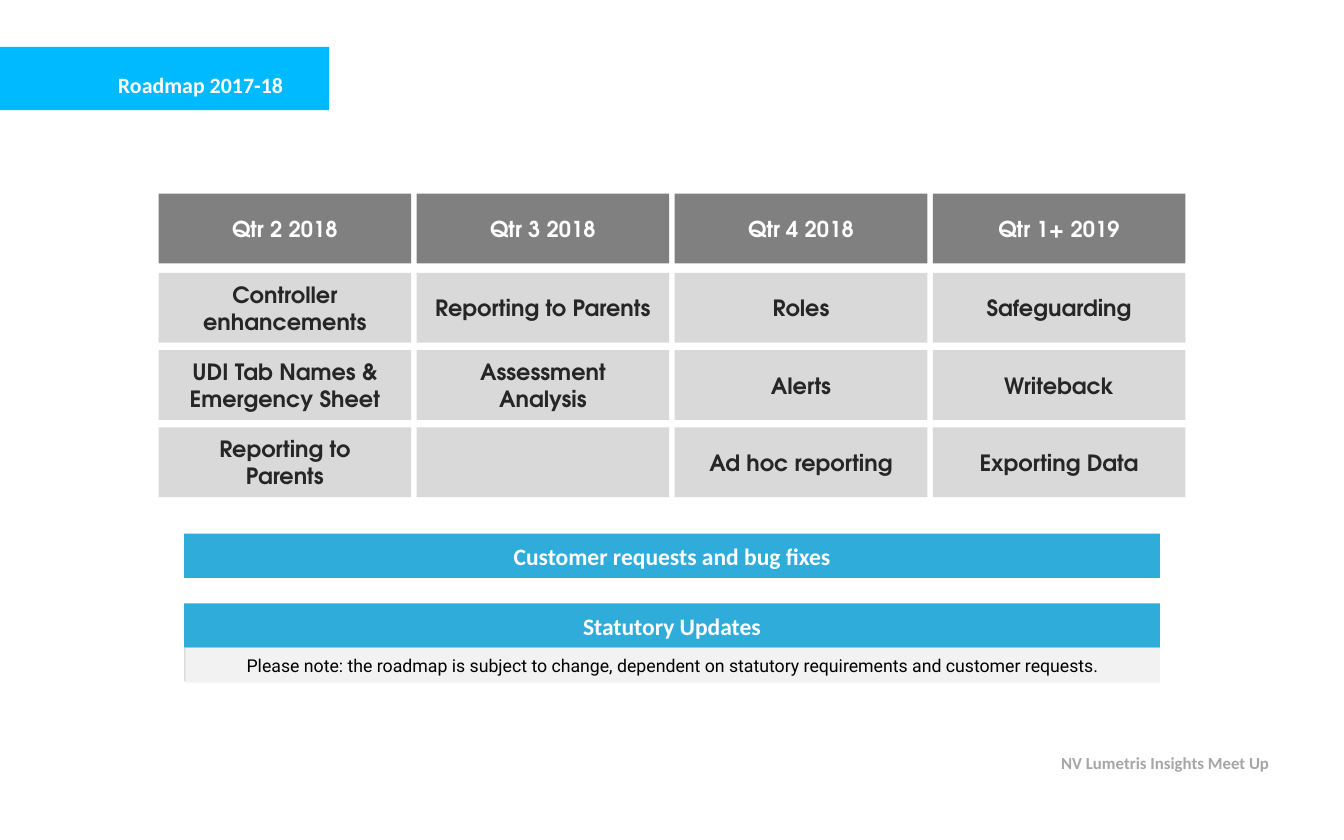
import pptx
import pptx.util
import pptx.dml.color
import pptx.enum.shapes
import pptx.enum.text
from pptx.util import Inches, Pt

COLORS = {
    "title": "00BAFF", "band": "30ACDA", "header": "808080", "cell": "D9D9D9",
    "note": "F2F2F2", "ink": "262626", "black": "000000", "white": "FFFFFF",
    "footer": "A6A6A6",
}
HEADING_FONT = "TeX Gyre Adventor"
BODY_FONT = "Calibri"
ALIGN = pptx.enum.text.PP_ALIGN
ANCHOR = pptx.enum.text.MSO_ANCHOR

ROADMAP = [
    ("Qtr 2 2018", ["Controller enhancements", "UDI Tab Names & Emergency Sheet",
                    "Reporting to Parents"]),
    ("Qtr 3 2018", ["Reporting to Parents", "Assessment Analysis", ""]),
    ("Qtr 4 2018", ["Roles", "Alerts", "Ad hoc reporting"]),
    ("Qtr 1+ 2019", ["Safeguarding", "Writeback", "Exporting Data"]),
]
SIDE_INSETS = {(0, 2): 0.4, (1, 1): 0.28}


def rgb(name):
    return pptx.dml.color.RGBColor.from_string(COLORS[name])


def add_box(s, x, y, w, h, fill):
    sp = s.shapes.add_shape(pptx.enum.shapes.MSO_SHAPE.RECTANGLE,
                            Inches(x), Inches(y), Inches(w), Inches(h))
    sp.shadow.inherit = False
    sp.fill.solid()
    sp.fill.fore_color.rgb = rgb(fill)
    sp.line.fill.background()
    return sp


def set_text(sp, text, size, font, color, bold=True, align=ALIGN.CENTER,
             anchor=ANCHOR.MIDDLE, inset=(0.09, 0.04)):
    tf = sp.text_frame
    tf.word_wrap = True
    tf.vertical_anchor = anchor
    tf.margin_left = tf.margin_right = Inches(inset[0])
    tf.margin_top = tf.margin_bottom = Inches(inset[1])
    p = tf.paragraphs[0]
    p.text = text
    p.alignment = align
    p.font.size = Pt(size)
    p.font.name = font
    p.font.bold = bold
    p.font.color.rgb = rgb(color)
    return p


def add_label(s, x, y, w, h, text, size, color, align=ALIGN.LEFT):
    sp = s.shapes.add_textbox(Inches(x), Inches(y), Inches(w), Inches(h))
    return set_text(sp, text, size, BODY_FONT, color, align=align,
                    anchor=ANCHOR.TOP, inset=(0.1, 0.05))


def add_title(s, x, y, w, h):
    add_box(s, x, y, w, h, "title")
    p = add_label(s, x + 0.78, y + 0.17, 1.6, 0.26, "Roadmap 2017-18", 11.7, "white")
    p.line_spacing = 0.8


def add_roadmap(s, x, y, w, h):
    gap, cell_h, header_gap = 0.04, 0.52, 0.59
    row_step = (h - header_gap - cell_h) / 2
    cell_w = (w - gap * (len(ROADMAP) - 1)) / len(ROADMAP)
    for col, (quarter, items) in enumerate(ROADMAP):
        left = x + col * (cell_w + gap)
        header = add_box(s, left, y, cell_w, cell_h, "header")
        set_text(header, quarter, 11.7, HEADING_FONT, "white")
        for row, item in enumerate(items):
            top = y + header_gap + row * row_step
            cell = add_box(s, left, top, cell_w, cell_h, "cell")
            if item:
                side = SIDE_INSETS.get((col, row), 0.09)
                set_text(cell, item, 12, HEADING_FONT, "ink", inset=(side, 0.04))


def add_bands(s, x, y, w, h):
    band_h, step = 0.33, 0.52
    for i, text in enumerate(["Customer requests and bug fixes", "Statutory Updates"]):
        band = add_box(s, x, y + i * step, w, band_h, "band")
        set_text(band, text, 12.6, BODY_FONT, "white")
    note_top = y + step + band_h
    note_h = h - step - band_h
    add_box(s, x, note_top, w, note_h - 0.01, "cell")
    note = add_box(s, x + 0.01, note_top, w - 0.01, note_h, "note")
    set_text(note, "Please note: the roadmap is subject to change, dependent on "
             "statutory requirements and customer requests.",
             9.5, "Roboto", "black", bold=False)


def add_footer(s, x, y, w, h):
    add_label(s, x, y, w, h, "NV Lumetris Insights Meet Up", 9, "footer", ALIGN.RIGHT)


def main():
    prs = pptx.Presentation()
    prs.slide_width = Inches(10)
    prs.slide_height = Inches(6.25)
    s = prs.slides.add_slide(prs.slide_layouts[6])
    add_title(s, 0, 0.35, 2.45, 0.47)
    add_roadmap(s, 1.18, 1.44, 7.64, 2.26)
    add_bands(s, 1.37, 3.97, 7.26, 1.11)
    add_footer(s, 6.88, 5.55, 2.66, 0.25)
    prs.save("out.pptx")


if __name__ == "__main__":
    main()
